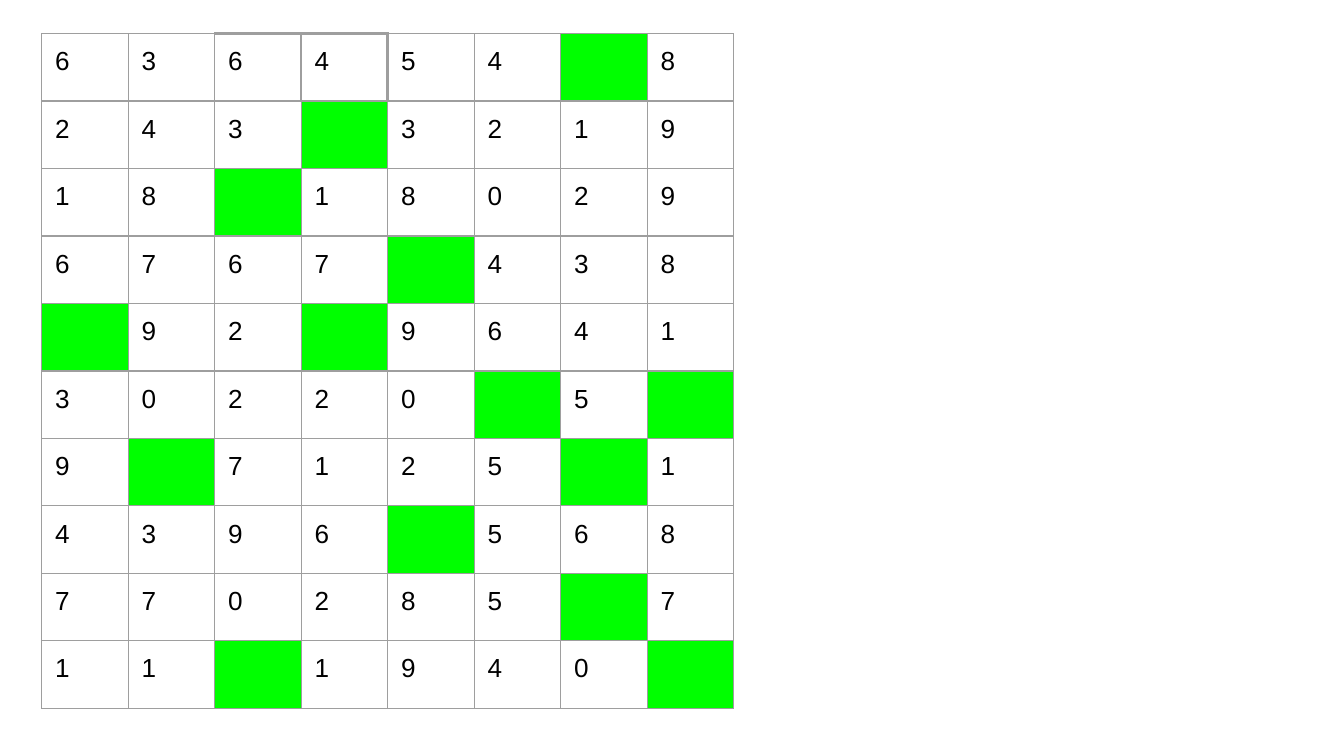
import pptx
import pptx.dml.color
import pptx.oxml
import pptx.oxml.ns
import pptx.util
from pptx.util import Inches

# One string per row; a dot is a green cell without a digit.
GRID = [
    "636454.8",
    "243.3219",
    "18.18029",
    "6767.438",
    ".92.9641",
    "30220.5.",
    "9.7125.1",
    "4396.568",
    "770285.7",
    "11.1940.",
]
GREEN, WHITE, BLACK, GREY = "00FF00", "FFFFFF", "000000", "9E9E9E"
THIN, THICK = 0.75, 1.5
THICK_SIDES = {(0, 2): "RT", (0, 3): "LRTB", (0, 4): "L", (1, 3): "T"}
MARGINS = ("margin_left", "margin_top", "margin_right", "margin_bottom")
FONT = {"name": "Arial", "size": pptx.util.Pt(14)}


def rgb(value):
    return pptx.dml.color.RGBColor.from_string(value)


def set_borders(cell, thick_sides):
    """Outline all four sides; call before the fill, which must follow in the XML."""
    properties = cell._tc.get_or_add_tcPr()
    for side in "LRTB":
        width = pptx.util.Pt(THICK if side in thick_sides else THIN)
        properties.append(pptx.oxml.parse_xml(
            f'<a:ln{side} {pptx.oxml.ns.nsdecls("a")} w="{width}">'
            f'<a:solidFill><a:srgbClr val="{GREY}"/></a:solidFill></a:ln{side}>'))


def write_digit(cell, digit):
    for margin in MARGINS:
        setattr(cell, margin, Inches(0.1))
    run = cell.text_frame.paragraphs[0].add_run()
    run.text = digit
    for name, value in FONT.items():
        setattr(run.font, name, value)
    run.font.color.rgb = rgb(BLACK)


presentation = pptx.Presentation()
presentation.slide_width = Inches(10)
presentation.slide_height = presentation.slide_width * 9 // 16
slide = presentation.slides.add_slide(presentation.slide_layouts[6])

table = slide.shapes.add_table(
    len(GRID), len(GRID[0]),
    Inches(0.31), Inches(0.25), Inches(5.15), Inches(5.02)).table
table.first_row = False
table.horz_banding = False

for row, digits in enumerate(GRID):
    for column, digit in enumerate(digits):
        cell = table.cell(row, column)
        set_borders(cell, THICK_SIDES.get((row, column), ""))
        cell.fill.solid()
        cell.fill.fore_color.rgb = rgb(GREEN if digit == "." else WHITE)
        if digit != ".":
            write_digit(cell, digit)

presentation.save("out.pptx")
